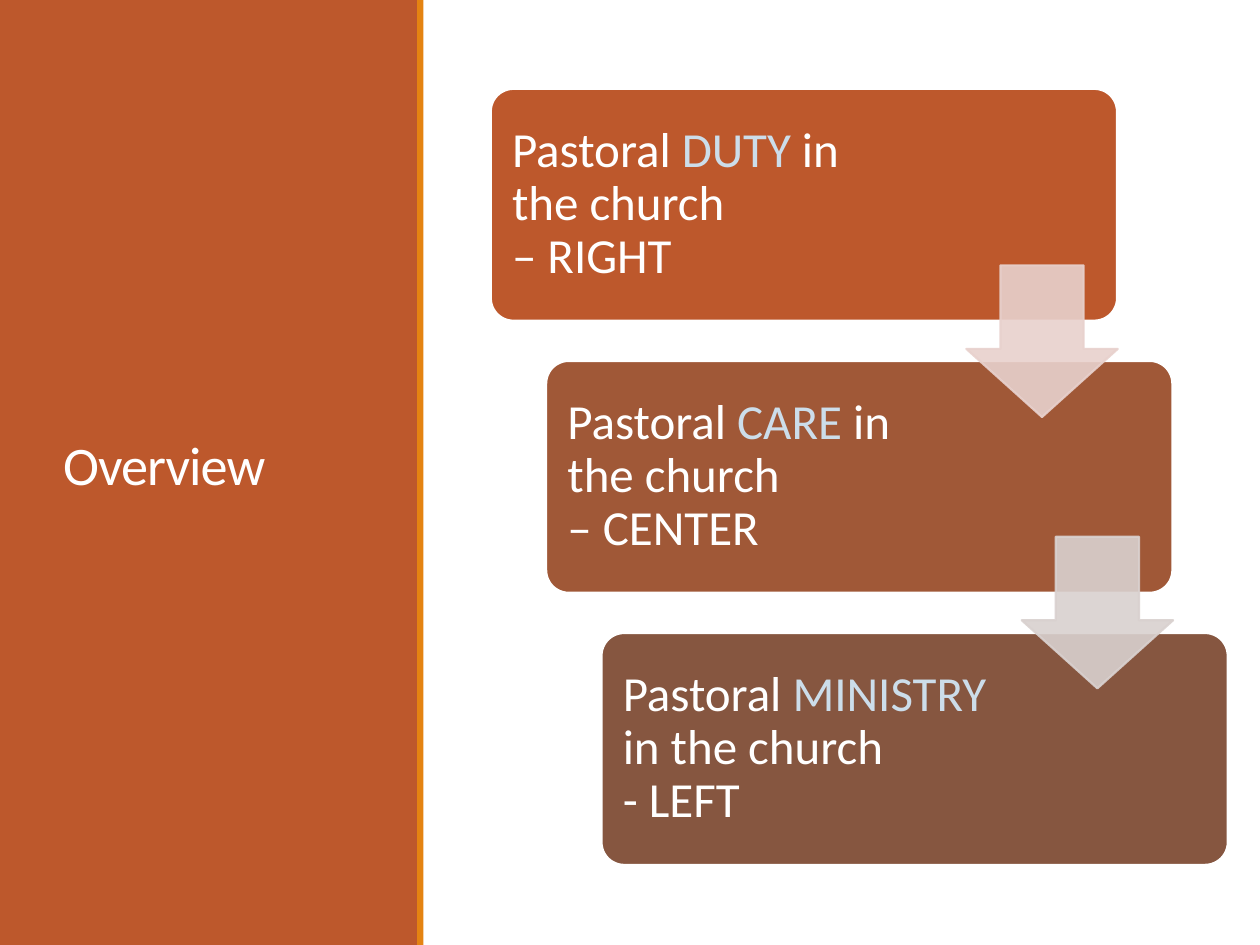
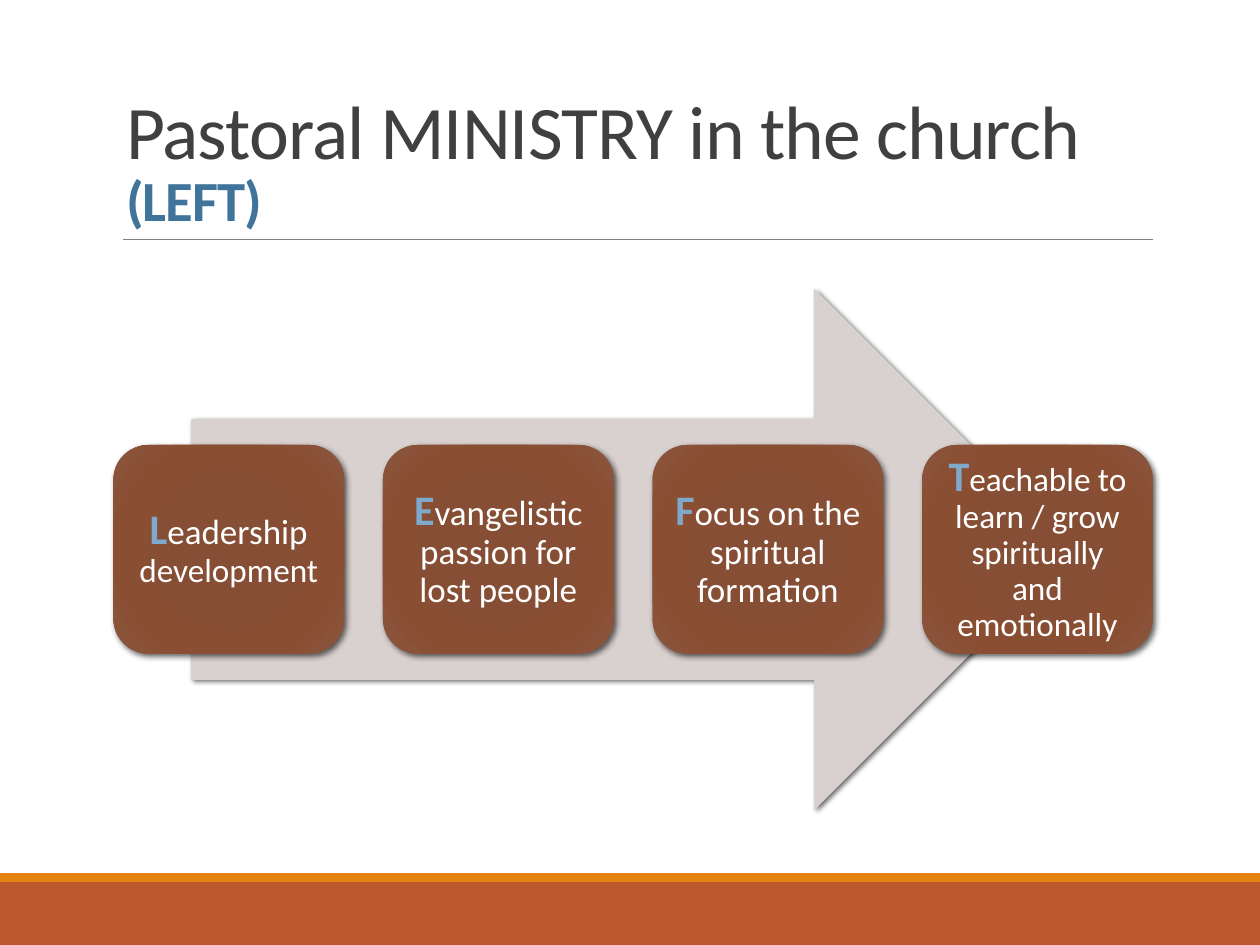
from dataclasses import dataclass

from lxml.etree import SubElement
from pptx import Presentation
from pptx.dml.color import RGBColor
from pptx.enum.shapes import MSO_CONNECTOR as Connector, MSO_SHAPE as Shape
from pptx.enum.text import MSO_ANCHOR as Anchor, MSO_AUTO_SIZE as AutoSize, PP_ALIGN as Align
from pptx.oxml.ns import qn
from pptx.util import Inches, Pt

FONT = "Calibri"
RUST, AMBER, WHITE = "BD582C", "E48312", "FFFFFF"
CHARCOAL, GREY, BLUE = "404040", "808080", "40749B"
PALE_BLUE, SKY_BLUE = "CCDDEA", "7EA9CA"
CARD_STOPS = [(0, "874C32"), (34, "864E34"), (70, "8A4E33"), (100, "8A553D")]
TITLE_ONLY = 5

STEPS = [
    ("DUTY", " in the church \v– RIGHT", RUST, 2.01),
    ("CARE", " in the church \v– CENTER", "A05837", 1.76),
    ("MINISTRY", " in the church \v- LEFT", "865640", 1.76),
]
STEP_ARROWS = ["E8D1CD", "D9D1CF"]
CARDS = [
    [("L", 24), ("eadership ", 20), ("development", 19)],
    [("E", 24), ("vangelistic passion for lost people", 20)],
    [("F", 24), ("ocus on the spiritual formation", 20)],
    [("T", 24), ("eachable to learn / grow spiritually and emotionally", 19)],
]


@dataclass
class Box:
    """A rectangle in inches."""
    left: float
    top: float
    width: float
    height: float

    def share(self, left, top, width, height):
        """Return the box covering the given shares of this one."""
        return Box(self.left + left * self.width, self.top + top * self.height,
                   width * self.width, height * self.height)

    def place(self):
        """Return left, top, width and height as lengths."""
        return [Inches(side) for side in (self.left, self.top, self.width, self.height)]


PAGE = Box(0, 0, 10, 7.5)


def paint(color_format, color):
    """Set a colour format to a hex colour."""
    color_format.rgb = RGBColor.from_string(color)


def add_box(page, kind, box, fill, adjustments=()):
    """Add a filled shape without line or shadow."""
    shape = page.shapes.add_shape(kind, *box.place())
    shape.shadow.inherit = False
    shape.fill.solid()
    paint(shape.fill.fore_color, fill)
    shape.line.fill.background()
    for index, value in enumerate(adjustments):
        shape.adjustments[index] = value
    return shape


def outline(shape, color, width):
    """Give a shape a solid line."""
    shape.line.fill.solid()
    paint(shape.line.fill.fore_color, color)
    shape.line.width = Pt(width)


def fade(shape, percent):
    """Make the fill and line of a shape partly transparent."""
    for color in list(shape._element.spPr.iter(qn("a:srgbClr"))):
        SubElement(color, qn("a:alpha"), val=str(percent * 1000))


def cast_shadow(shape, blur):
    """Add a soft black shadow to the lower right."""
    effects = shape._element.spPr.find(qn("a:effectLst"))
    shadow = SubElement(effects, qn("a:outerShdw"), blurRad=str(Pt(blur)),
                        dist=str(Pt(2)), dir="2700000", rotWithShape="0")
    color = SubElement(shadow, qn("a:srgbClr"), val="000000")
    SubElement(color, qn("a:alpha"), val="60000")


def fill_radial(shape, stops):
    """Replace the solid fill by a circular gradient."""
    properties = shape._element.spPr
    solid = properties.find(qn("a:solidFill"))
    gradient = SubElement(properties, qn("a:gradFill"), rotWithShape="1")
    stop_list = SubElement(gradient, qn("a:gsLst"))
    for position, color in stops:
        stop = SubElement(stop_list, qn("a:gs"), pos=str(position * 1000))
        SubElement(stop, qn("a:srgbClr"), val=color)
    shade = SubElement(gradient, qn("a:path"))
    shade.set("path", "circle")
    SubElement(shade, qn("a:fillToRect"), **dict.fromkeys("ltrb", "100000"))
    properties.replace(solid, gradient)


def write(shape, spans, size, spacing, align=Align.LEFT, anchor=Anchor.MIDDLE,
          insets=(0.1, 0.05, 0.1, 0.05), tracking=None):
    """Fill a shape with one paragraph of (text, colour, size, bold) spans."""
    frame = shape.text_frame
    frame.word_wrap, frame.auto_size = True, AutoSize.NONE
    frame.vertical_anchor = anchor
    (frame.margin_left, frame.margin_top,
     frame.margin_right, frame.margin_bottom) = [Inches(inset) for inset in insets]
    para = frame.paragraphs[0]
    para.alignment, para.line_spacing = align, spacing
    para.font.name, para.font.size = FONT, Pt(size)
    for text, color, span_size, bold in spans:
        for index, line in enumerate(text.split("\v")):
            if index:
                para.add_line_break()
            if not line:
                continue
            span = para.add_run()
            span.text = line
            paint(span.font.color, color)
            span.font.bold = bold
            if span_size != size:
                span.font.size = Pt(span_size)
            if tracking:
                span._r.get_or_add_rPr().set("spc", str(tracking))


def add_title(page, box, spans, size, anchor):
    """Move and fill the title placeholder."""
    title = page.shapes.title
    title.left, title.top, title.width, title.height = box.place()
    write(title, spans, size, 0.85, anchor=anchor, tracking=-50)


def add_band(page, panel, accent):
    """Draw a rust panel with its amber edge."""
    add_box(page, Shape.RECTANGLE, panel, RUST)
    add_box(page, Shape.RECTANGLE, accent, AMBER)


def add_steps(page, box):
    """Draw the descending steps and the arrows between them."""
    for row, (keyword, ending, color, right_inset) in enumerate(STEPS):
        step = add_box(page, Shape.ROUNDED_RECTANGLE,
                       box.share(0.075 * row, 0.35 * row, 0.85, 0.3), color, [0.1])
        outline(step, WHITE, 2)
        spans = [("Pastoral ", WHITE, 28, False), (keyword, PALE_BLUE, 28, False),
                 (ending, WHITE, 28, False)]
        write(step, spans, 28, 0.9, insets=(0.12, 0.12, right_inset, 0.12))
    for row, color in enumerate(STEP_ARROWS):
        arrow = add_box(page, Shape.DOWN_ARROW,
                        box.share(0.645 + 0.075 * row, 0.228 + 0.349 * row, 0.205, 0.195),
                        color, [0.55, 0.45])
        outline(arrow, color, 1.25)
        fade(arrow, 90)


def add_process(page, box):
    """Draw the wide arrow with a row of evenly spaced cards on it."""
    arrow = add_box(page, Shape.RIGHT_ARROW, box.share(0.075, 0, 0.85, 1), "D9D1CF")
    cast_shadow(arrow, 3)
    width = 0.222
    pitch = (1 - width) / (len(CARDS) - 1)
    for column, ((initial, initial_size), *rest) in enumerate(CARDS):
        card = add_box(page, Shape.ROUNDED_RECTANGLE,
                       box.share(pitch * column, 0.3, width, 0.4), RUST)
        fill_radial(card, CARD_STOPS)
        cast_shadow(card, 3.5)
        spans = [(initial, SKY_BLUE, initial_size, True)]
        spans += [(text, WHITE, size, False) for text, size in rest]
        write(card, spans, 20, 0.9, Align.CENTER, insets=[0.1] * 4)


def add_rule(page, left, right, top):
    """Draw a thin horizontal line."""
    rule = page.shapes.add_connector(Connector.STRAIGHT, Inches(left), Inches(top),
                                     Inches(right), Inches(top))
    outline(rule, GREY, 0.5)
    SubElement(rule._element.spPr, qn("a:effectLst"))


def build_overview(page):
    """Build the slide with a side panel and steps."""
    add_band(page, PAGE.share(0, 0, 0.332, 1), PAGE.share(0.331, 0, 0.005, 1))
    panel_title = page.shapes.title._element
    panel_title.getparent().append(panel_title)
    add_title(page, Box(0.4, 0.57, 2.53, 6.31), [("Overview", WHITE, 31, False)],
              31, Anchor.MIDDLE)
    add_steps(page, Box(3.89, 0.7, 5.86, 6.17))


def build_ministry(page):
    """Build the slide with a footer band and a process arrow."""
    add_band(page, Box(0, 7, 10, 0.5), Box(0, 6.93, 10, 0.07))
    add_rule(page, 0.98, 9.15, 1.9)
    spans = [("Pastoral MINISTRY in the church \v", CHARCOAL, 43.2, False),
             ("(LEFT)", BLUE, 32.4, True)]
    add_title(page, Box(0.9, 0.31, 8.25, 1.59), spans, 43.2, Anchor.BOTTOM)
    add_process(page, Box(0.9, 2.29, 8.25, 4.14))


def main():
    """Build and save the deck."""
    deck = Presentation()
    deck.slide_width, deck.slide_height = Inches(PAGE.width), Inches(PAGE.height)
    for build in (build_overview, build_ministry):
        build(deck.slides.add_slide(deck.slide_layouts[TITLE_ONLY]))
    deck.save("out.pptx")


if __name__ == "__main__":
    main()
